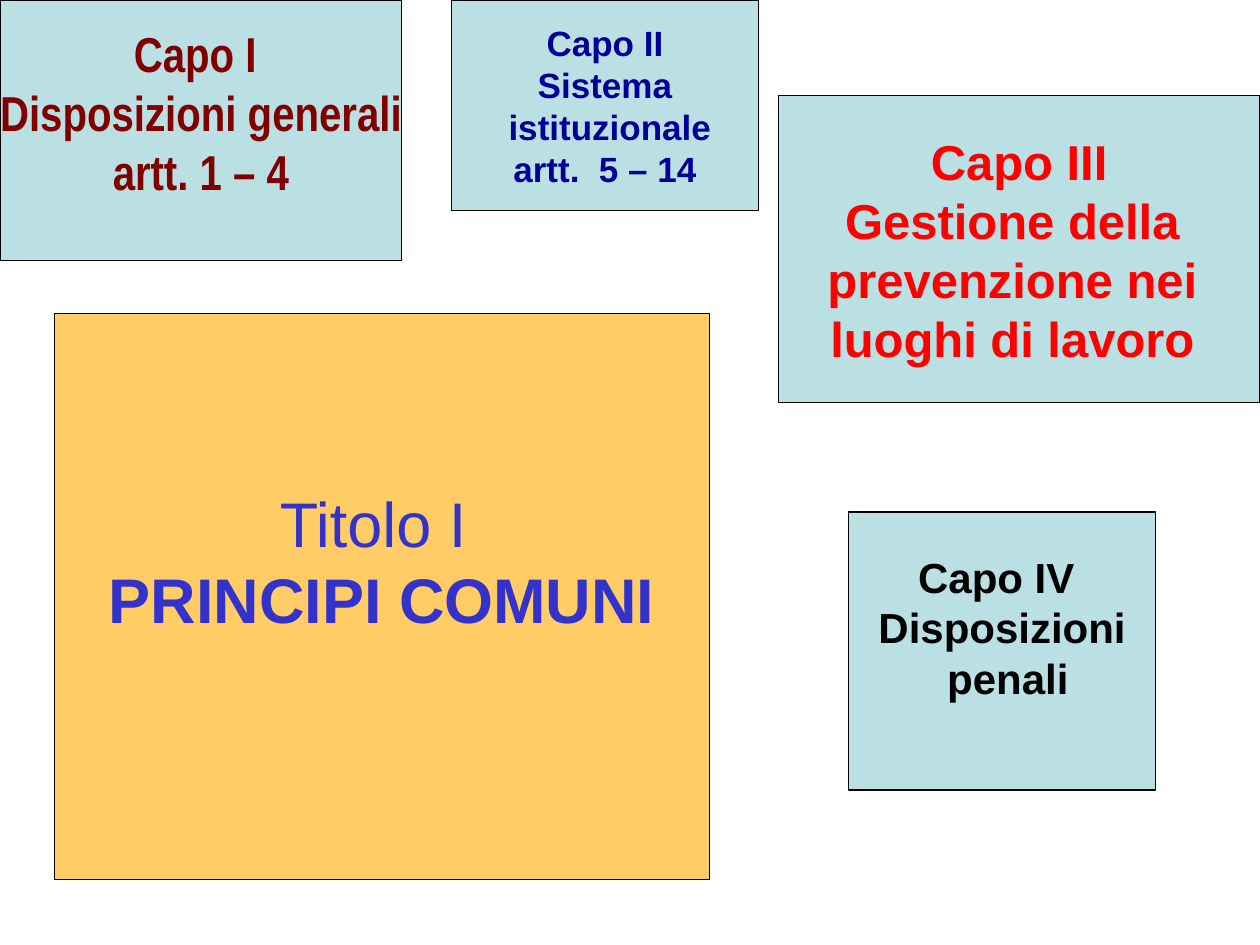
import pptx
import pptx.dml.color
import pptx.enum.shapes
import pptx.enum.text
import pptx.util

Pt = pptx.util.Pt
RGB = pptx.dml.color.RGBColor

BLACK = RGB(0x00, 0x00, 0x00)
ORANGE = RGB(0xFF, 0xCC, 0x66)
PALE_TEAL = RGB(0xBB, 0xE0, 0xE3)
VIOLET = RGB(0x33, 0x33, 0xCC)
MAROON = RGB(0x80, 0x00, 0x00)
NAVY = RGB(0x00, 0x00, 0x99)
RED = RGB(0xFF, 0x00, 0x00)


def add_box(slide, box, fill, lines, size, color, font="Arial", lift=0):
    left, top, width, height = box
    sp = slide.shapes.add_shape(
        pptx.enum.shapes.MSO_SHAPE.RECTANGLE,
        Pt(left), Pt(top), Pt(width), Pt(height))
    sp.shadow.inherit = False
    sp.fill.solid()
    sp.fill.fore_color.rgb = fill
    sp.line.color.rgb = BLACK
    sp.line.width = Pt(0.75)

    tf = sp.text_frame
    tf.word_wrap = False
    tf.vertical_anchor = pptx.enum.text.MSO_ANCHOR.MIDDLE
    tf.margin_bottom = Pt(3.6 + lift)
    for i, (text, bold) in enumerate(lines):
        p = tf.add_paragraph() if i else tf.paragraphs[0]
        p.alignment = pptx.enum.text.PP_ALIGN.CENTER
        r = p.add_run()
        r.text = text
        r.font.name = font
        r.font.size = Pt(size)
        r.font.bold = bold
        r.font.color.rgb = color


def add_title_box(slide, box):
    lines = [("Titolo I ", False), ("PRINCIPI COMUNI", True)]
    add_box(slide, box, ORANGE, lines, 36, VIOLET, lift=41.4)


def add_chapter_box(slide, box, lines, size, color, **options):
    add_box(slide, box, PALE_TEAL, [(text, True) for text in lines],
            size, color, **options)


def main():
    prs = pptx.Presentation()
    prs.slide_width, prs.slide_height = Pt(720), Pt(540)
    s = prs.slides.add_slide(prs.slide_layouts[6])

    add_title_box(s, (31, 179.2, 374.5, 323.5))
    add_chapter_box(s, (0, 0, 229.6, 149),
                    ["Capo I ", "Disposizioni generali", "artt. 1 – 4"],
                    28, MAROON, font="Arial Narrow", lift=20.7)
    add_chapter_box(s, (257.9, 0, 175.7, 120.2),
                    ["Capo II", "Sistema", " istituzionale", "artt.  5 – 14"],
                    20, NAVY)
    add_chapter_box(s, (444.8, 54.6, 275.2, 175.6),
                    ["Capo III", "Gestione della ", "prevenzione nei ",
                     "luoghi di lavoro "],
                    28, RED)
    add_chapter_box(s, (484.8, 292.5, 175.6, 159),
                    ["Capo IV ", "Disposizioni", " penali"],
                    24, BLACK, lift=27.6)

    prs.save("out.pptx")


if __name__ == "__main__":
    main()
